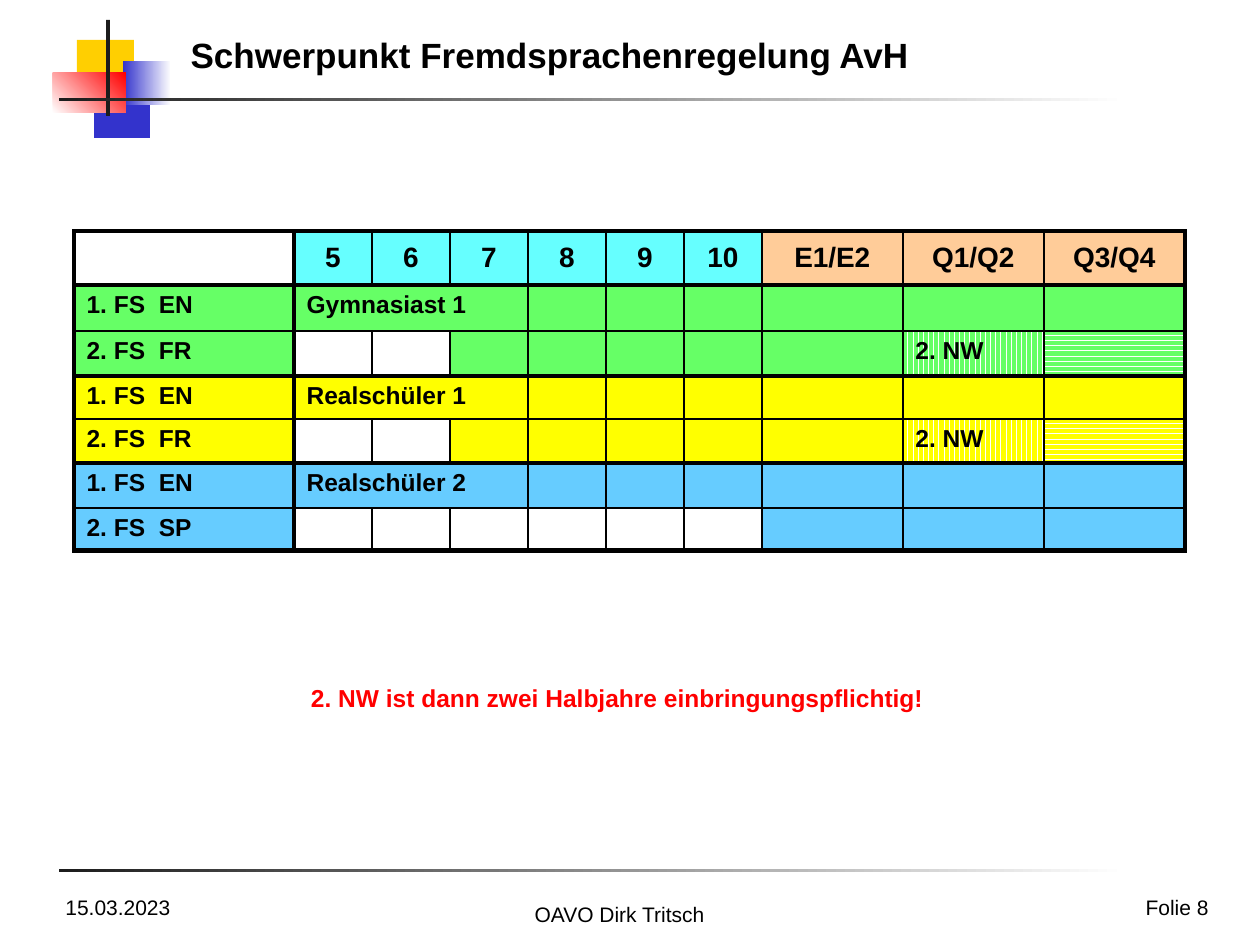
from pptx import Presentation
from pptx.dml.color import RGBColor
from pptx.enum.dml import MSO_PATTERN as PAT
from pptx.enum.shapes import MSO_SHAPE as SHAPE
from pptx.enum.text import MSO_ANCHOR as ANCHOR, PP_ALIGN as ALIGN
from pptx.oxml.ns import qn
from pptx.util import Emu, Pt
from lxml.etree import SubElement

PX = 914400 // 126
FONT = "Arial"
BLACK, WHITE, RED = "000000", "FFFFFF", "FF0000"
INK, BLUE = "1C1C1C", "3333CC"
CYAN, PEACH = "66FFFF", "FFCC99"

TITLE = "Schwerpunkt Fremdsprachenregelung AvH"
DECOR = [
    ((77, 40, 57, 44), "FFCF01"),
    ((94, 94, 56, 44), BLUE),
    ((123, 61, 48, 44), (BLUE, WHITE, 0)),
    ((53, 73, 73, 40), (WHITE, RED, 45)),
    ((106, 20, 4, 96), INK),
    ((59, 98, 1067, 3), (INK, WHITE, 0)),
    ((59, 869, 1067, 3), (INK, WHITE, 0)),
]
TEXTS = [
    ((927, 888, 294, 28), "Folie 8", ALIGN.RIGHT, dict(size=12)),
    ((53, 888, 294, 38), "15.03.2023", ALIGN.LEFT, dict(size=12)),
    ((420, 895, 399, 30), "OAVO Dirk Tritsch", ALIGN.CENTER, dict(size=12)),
    ((68, 677, 1099, 43), "2. NW ist dann zwei Halbjahre einbringungspflichtig!",
     ALIGN.CENTER, dict(size=14, bold=True, color=RED)),
]
HEADS = ["5", "6", "7", "8", "9", "10", "E1/E2", "Q1/Q2", "Q3/Q4"]
GROUPS = [
    ("Gymnasiast 1", "66FF66", "2. FS  FR", 3, "2. NW"),
    ("Realschüler 1", "FFFF00", "2. FS  FR", 3, "2. NW"),
    ("Realschüler 2", "66CCFF", "2. FS  SP", 7, ""),
]
FIRST_LANGUAGE = "1. FS  EN"
COLS = [220] + [78] * 6 + [141] * 3
ROWS = [54, 46, 45, 43, 44, 45, 42]
TABLE_AT = 74, 231
LAST = len(COLS) - 1


def rgb(value):
    return RGBColor.from_string(value)


def px(*values):
    return [Emu(v * PX) for v in values]


def paint(fill, colour):
    if colour is None:
        fill.background()
    elif isinstance(colour, str):
        fill.solid()
        fill.fore_color.rgb = rgb(colour)
    elif isinstance(colour[0], str):
        start, end, angle = colour
        fill.gradient()
        fill.gradient_angle = angle
        for stop, c, pos in zip(fill.gradient_stops, (start, end), (0, 1)):
            stop.color.rgb = rgb(c)
            stop.position = pos
    else:
        fill.patterned()
        fill.pattern = colour[0]
        fill.fore_color.rgb = rgb(colour[1])
        fill.back_color.rgb = rgb(WHITE)


def write(tf, text, align=ALIGN.LEFT, size=14, bold=False, color=BLACK):
    p = tf.paragraphs[0]
    p.alignment = align
    if not text:
        SubElement(p._p, qn("a:endParaRPr"), sz=str(size * 100))
        return
    r = p.add_run()
    r.text = text
    for name, value in dict(name=FONT, size=Pt(size), bold=bold).items():
        setattr(r.font, name, value)
    r.font.color.rgb = rgb(color)


def border(cell, row, col):
    widths = {
        "L": {0: 2.25, 1: 3}.get(col, 1),
        "R": {0: 3, LAST: 2.25}.get(col, 1),
        "T": 2.25 if row == 0 else 3 if row % 2 else 1,
        "B": 1 if row % 2 else 3,
    }
    tc_pr = cell._tc.get_or_add_tcPr()
    for side, width in widths.items():
        ln = SubElement(tc_pr, qn("a:ln" + side), w=str(Pt(width)))
        SubElement(SubElement(ln, qn("a:solidFill")), qn("a:srgbClr"), val=BLACK)


def table_content():
    rows = [[("", None)] + [(h, CYAN if i < 6 else PEACH) for i, h in enumerate(HEADS)]]
    for pupil, colour, second, start, science in GROUPS:
        rows.append([(FIRST_LANGUAGE, colour), (pupil, colour)] + [("", colour)] * (LAST - 1))
        row = [(second, colour)] + [("", colour if c >= start else None)
                                    for c in range(1, LAST + 1)]
        if science:
            row[-2:] = [(science, (PAT.DARK_VERTICAL, colour)),
                        ("", (PAT.DARK_HORIZONTAL, colour))]
        rows.append(row)
    return rows


def add_table(s):
    table = s.shapes.add_table(len(ROWS), len(COLS),
                               *px(*TABLE_AT, sum(COLS), sum(ROWS))).table
    table.first_row = table.horz_banding = False
    for col, width in zip(table.columns, px(*COLS)):
        col.width = width
    for row, height in zip(table.rows, px(*ROWS)):
        row.height = height
    for r, row in enumerate(table_content()):
        for c, (text, colour) in enumerate(row):
            cell = table.cell(r, c)
            border(cell, r, c)
            paint(cell.fill, colour)
            head = r == 0
            cell.vertical_anchor = ANCHOR.MIDDLE if head else ANCHOR.TOP
            write(cell.text_frame, text, ALIGN.CENTER if head else ALIGN.LEFT,
                  16 if head else 14, True)
        if r % 2:
            table.cell(r, 1).merge(table.cell(r, 3))


def main():
    prs = Presentation()
    prs.slide_width, prs.slide_height = px(1260, 945)
    s = prs.slides.add_slide(prs.slide_layouts[5])

    for box, colour in DECOR:
        sp = s.shapes.add_shape(SHAPE.RECTANGLE, *px(*box))
        sp.shadow.inherit = False
        sp.line.fill.background()
        paint(sp.fill, colour)

    title = s.shapes.title
    title.left, title.top, title.width, title.height = px(178, 39, 906, 43)
    paint(title.fill, WHITE)
    title.text_frame.vertical_anchor = ANCHOR.BOTTOM
    write(title.text_frame, TITLE, size=20, bold=True)

    add_table(s)
    for box, text, align, style in TEXTS:
        tf = s.shapes.add_textbox(*px(*box)).text_frame
        tf.word_wrap = True
        write(tf, text, align, **style)

    prs.save("out.pptx")


if __name__ == "__main__":
    main()
